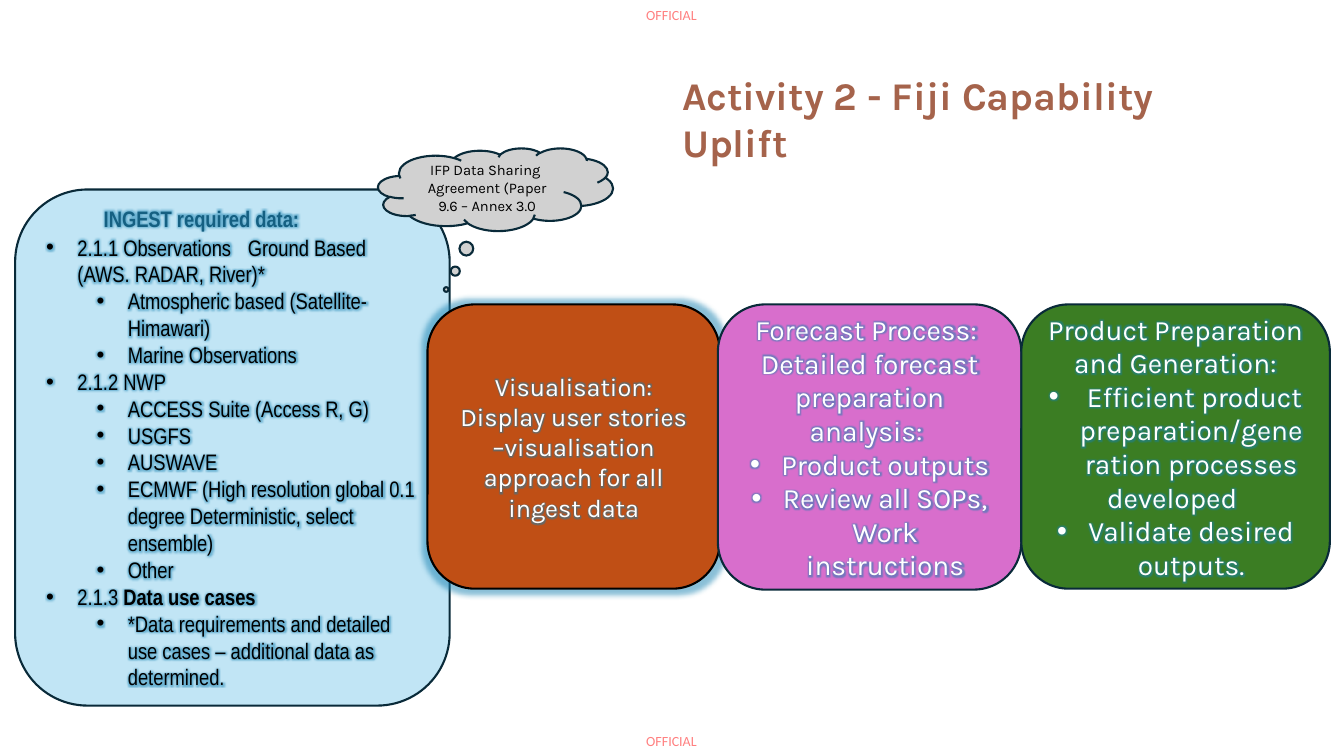
"""Build the slide on the four steps of the Fiji capability uplift."""
from lxml import etree
from pptx import Presentation
from pptx.dml.color import RGBColor
from pptx.enum.shapes import MSO_SHAPE
from pptx.enum.text import MSO_ANCHOR, MSO_AUTO_SIZE, PP_ALIGN
from pptx.oxml.ns import qn
from pptx.util import Inches, Pt

ROUNDED = MSO_SHAPE.ROUNDED_RECTANGLE
CLOUD = MSO_SHAPE.CLOUD_CALLOUT
LEFT, CENTER = PP_ALIGN.LEFT, PP_ALIGN.CENTER
WIDTH, HEIGHT = 13.33, 7.5
TITLE_ONLY = 5
INDENT = 0.31
LEVEL_STEP = 0.5
STEP_TOP, STEP_HEIGHT = 3.02, 2.82
NAVY, BLACK, WHITE = "092A39", "000000", "FFFFFF"
TEAL, GLOW = "156082", "1580B0"


def add_glow(effects, points):
    """Add a blue glow to an effect list."""
    glow = etree.SubElement(effects, qn("a:glow"), rad=str(Pt(points)))
    color = etree.SubElement(glow, qn("a:srgbClr"), val=GLOW)
    etree.SubElement(color, qn("a:alpha"), val="50000")


def write_lines(frame, lines, font, size, color, align, glowing=False):
    """Write (level, text, bold text) lines; a level of None has no bullet."""
    for index, (level, *texts) in enumerate(lines):
        paragraph = frame.add_paragraph() if index else frame.paragraphs[0]
        paragraph.alignment = align
        if level is not None:
            paragraph.level = level
            properties = paragraph._p.get_or_add_pPr()
            properties.set("marL", str(Inches(INDENT + level * LEVEL_STEP)))
            properties.set("indent", str(Inches(-INDENT)))
            etree.SubElement(properties, qn("a:buFont"), typeface="Arial")
            etree.SubElement(properties, qn("a:buChar"), char="•")
        paragraph.font.name = font
        paragraph.font.size = Pt(size)
        paragraph.font.color.rgb = RGBColor.from_string(color)
        for position, text in enumerate(texts):
            run = paragraph.add_run()
            run.text = text
            if position:
                run.font.bold = True
            if glowing:
                properties = run._r.get_or_add_rPr()
                add_glow(etree.SubElement(properties, qn("a:effectLst")), 5)


presentation = Presentation()
presentation.slide_width = Inches(WIDTH)
presentation.slide_height = Inches(HEIGHT)
slide = presentation.slides.add_slide(presentation.slide_layouts[TITLE_ONLY])

title = slide.shapes.title
title.left, title.top = Inches(WIDTH / 2), Inches(0.66)
title.width, title.height = Inches(5.64), Inches(1.04)
title.text_frame.word_wrap = True
title.text_frame.auto_size = MSO_AUTO_SIZE.NONE
title.text_frame.vertical_anchor = MSO_ANCHOR.TOP
write_lines(title.text_frame, [(None, "Activity 2 - Fiji Capability Uplift")],
            "Karla", 28, "A5634B", LEFT)
title.text_frame.paragraphs[0].font.bold = True

MARK_LEFT, MARK_WIDTH, MARK_HEIGHT, MARK_MARGIN = 6.41, 0.53, 0.17, 0.06
for top in (MARK_MARGIN, HEIGHT - MARK_MARGIN - MARK_HEIGHT):
    marking = slide.shapes.add_textbox(
        Inches(MARK_LEFT), Inches(top), Inches(MARK_WIDTH), Inches(MARK_HEIGHT))
    frame = marking.text_frame
    frame.margin_left = frame.margin_right = 0
    frame.margin_top = frame.margin_bottom = 0
    write_lines(frame, [(None, "OFFICIAL")], "Calibri", 10, "FF8080", LEFT)

ingest_lines = [
    (None, "INGEST required data:"),
    (0, "2.1.1 Observations\tGround Based (AWS. RADAR, River)*"),
    (1, "Atmospheric based (Satellite- Himawari)"),
    (1, "Marine Observations"),
    (0, "2.1.2 NWP"),
    (1, "ACCESS Suite (Access R, G)"),
    (1, "USGFS"),
    (1, "AUSWAVE"),
    (1, "ECMWF (High resolution global 0.1 degree Deterministic, select ensemble)"),
    (1, "Other"),
    (0, "2.1.3 ", "Data use cases"),
    (1, "*Data requirements and detailed use cases – additional data as determined."),
]
visualisation_lines = [
    (None, "Visualisation: Display user stories –visualisation approach for all ingest data"),
]
forecast_lines = [
    (None, "Forecast Process: "),
    (None, "Detailed forecast preparation analysis: "),
    (0, "Product outputs"),
    (0, "Review all SOPs, Work instructions"),
]
product_lines = [
    (None, "Product Preparation and Generation:"),
    (0, " Efficient product preparation/generation processes"),
    (None, "developed "),
    (0, "Validate desired outputs."),
]
agreement_lines = [
    (None, "IFP Data Sharing "),
    (None, "Agreement (Paper 9.6 – Annex 3.0"),
]

panels = [
    ("Ingest", ROUNDED, (0.15, 1.88, 4.31, 5.12), "C1E5F5", NAVY,
     ingest_lines, "Arial Narrow", 16, BLACK, LEFT),
    ("Visualisation", ROUNDED, (4.24, STEP_TOP, 2.9, STEP_HEIGHT), "C04F15", BLACK,
     visualisation_lines, "Karla", 18, WHITE, CENTER),
    ("Forecast", ROUNDED, (7.12, STEP_TOP, 3.01, 2.83), "D86ECC", NAVY,
     forecast_lines, "Karla", 20, WHITE, CENTER),
    ("Product", ROUNDED, (10.13, STEP_TOP, 3.06, STEP_HEIGHT), "3B7D23", NAVY,
     product_lines, "Karla", 20, WHITE, CENTER),
    ("Agreement", CLOUD, (3.75, 1.47, 2.33, 0.82), "D1D1D1", NAVY,
     agreement_lines, "Karla", 10.5, BLACK, CENTER),
]
shapes = {}
for name, kind, box, fill, line, lines, font, size, color, align in panels:
    shape = slide.shapes.add_shape(kind, *map(Inches, box))
    shape.shadow.inherit = False
    shape.fill.solid()
    shape.fill.fore_color.rgb = RGBColor.from_string(fill)
    shape.line.color.rgb = RGBColor.from_string(line)
    shape.line.width = Pt(1.5)
    shape.text_frame.word_wrap = True
    shape.text_frame.vertical_anchor = MSO_ANCHOR.MIDDLE
    write_lines(shape.text_frame, lines, font, size, color, align,
                glowing=kind == ROUNDED)
    shapes[name] = shape

heading = shapes["Ingest"].text_frame.paragraphs[0]
heading._p.get_or_add_pPr().set("marL", str(Inches(0.57)))
heading.space_after = Pt(1.5)
heading.font.bold = True
heading.font.color.rgb = RGBColor.from_string(TEAL)

visualisation = shapes["Visualisation"]
visualisation.text_frame.margin_left = Inches(0.12)
visualisation.text_frame.margin_right = Inches(0.12)
add_glow(visualisation._element.spPr.find(qn("a:effectLst")), 8)

agreement = shapes["Agreement"]
agreement.adjustments[0] = -0.21
agreement.adjustments[1] = 1.21

presentation.save("out.pptx")
